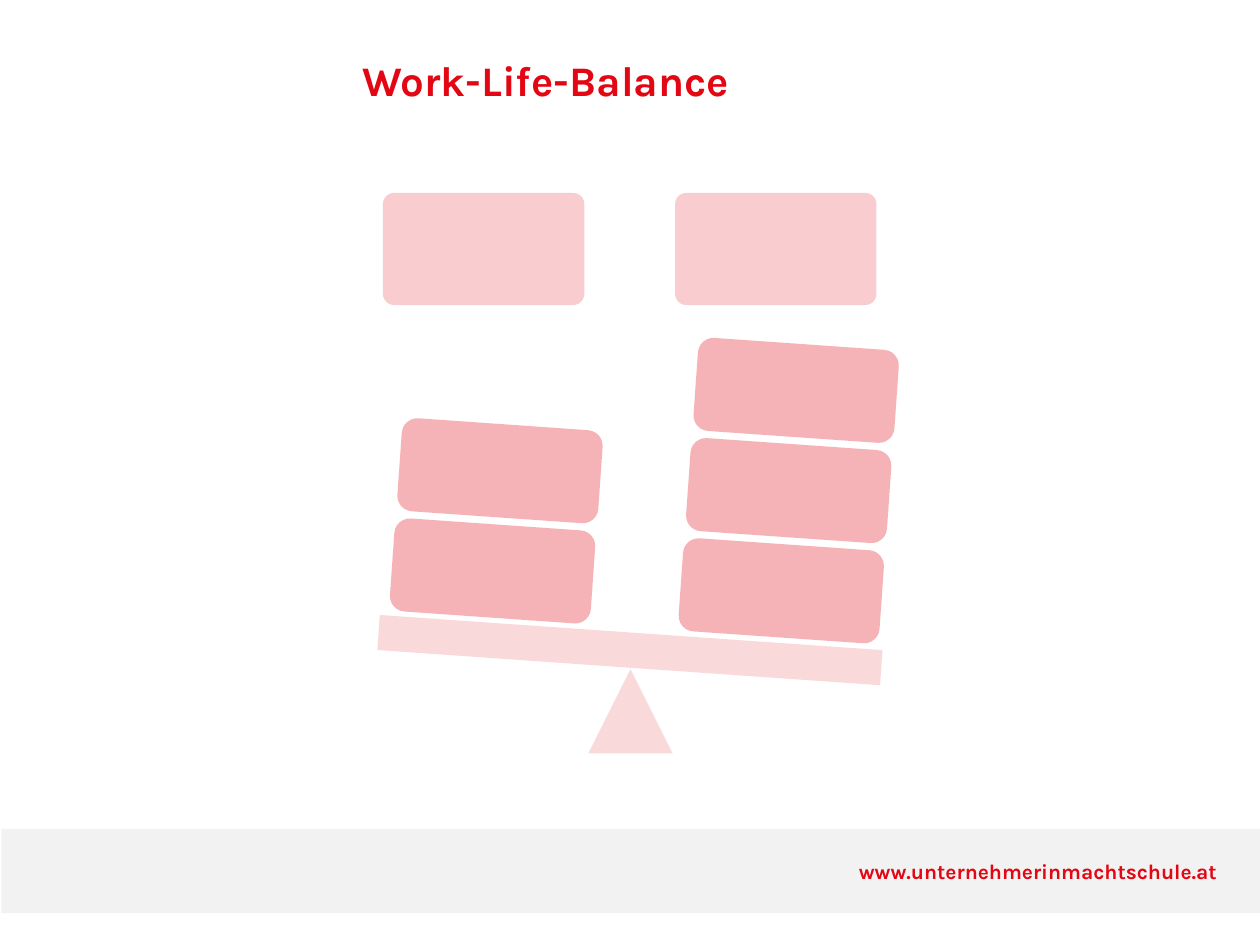
from dataclasses import dataclass
from typing import Optional

import pptx
import pptx.dml.color
import pptx.enum.shapes
import pptx.enum.text
import pptx.oxml
import pptx.oxml.ns
import pptx.util

Cm = pptx.util.Cm
Pt = pptx.util.Pt
RGBColor = pptx.dml.color.RGBColor
MSO_SHAPE = pptx.enum.shapes.MSO_SHAPE

RED = RGBColor(0xE3, 0x06, 0x13)
GRAY = RGBColor(0xF2, 0xF2, 0xF2)
FONT = "Karla"
TILT = 4
BLOCK_SHIFT, BLOCK_RISE = 0.15, 2.02


@dataclass
class Part:
    """A filled shape; lengths in cm, opacity in percent."""
    kind: MSO_SHAPE
    left: float
    top: float
    width: float
    height: float
    opacity: int = 100
    color: RGBColor = RED
    rotation: float = 0
    corner: Optional[float] = None


@dataclass
class Stack:
    """Blocks piled up at right angles to the tilted plank."""
    left: float
    bottom_top: float
    count: int


CARDS = [Part(MSO_SHAPE.ROUNDED_RECTANGLE, x, 3.89, 4.06, 2.26, 20, corner=0.1)
         for x in (7.72, 13.61)]
SEESAW = [
    Part(MSO_SHAPE.ISOSCELES_TRIANGLE, 11.86, 13.49, 1.7, 1.7, 15),
    Part(MSO_SHAPE.RECTANGLE, 7.62, 12.75, 10.16, 0.71, 15, rotation=TILT),
]
STACKS = [Stack(13.72, 10.97, 3), Stack(7.9, 10.57, 2)]
FOOTER = Part(MSO_SHAPE.RECTANGLE, 0.03, 16.71, 25.37, 1.7, color=GRAY)


def add_part(s: pptx.slide.Slide, part: Part) -> pptx.shapes.autoshape.Shape:
    sp = s.shapes.add_shape(part.kind, Cm(part.left), Cm(part.top),
                            Cm(part.width), Cm(part.height))
    sp.shadow.inherit = False
    sp.line.fill.background()
    sp.fill.solid()
    sp.fill.fore_color.rgb = part.color
    sp.rotation = part.rotation
    if part.corner is not None:
        sp.adjustments[0] = part.corner
    if part.opacity < 100:
        clr = sp.fill._xPr.find(".//" + pptx.oxml.ns.qn("a:srgbClr"))
        alpha = pptx.oxml.parse_xml(
            f'<a:alpha {pptx.oxml.ns.nsdecls("a")} val="{part.opacity * 1000}"/>')
        clr.append(alpha)
    return sp


def add_stack(s: pptx.slide.Slide, stack: Stack) -> None:
    for i in range(stack.count):
        add_part(s, Part(MSO_SHAPE.ROUNDED_RECTANGLE,
                         stack.left + i * BLOCK_SHIFT,
                         stack.bottom_top - i * BLOCK_RISE,
                         4.06, 1.88, 30, rotation=TILT))


def set_text(sp: pptx.shapes.autoshape.Shape, text: str, size: float,
             align: pptx.enum.text.PP_ALIGN) -> None:
    tf = sp.text_frame
    tf.word_wrap = True
    p = tf.paragraphs[0]
    p.text = text
    p.alignment = align
    p.font.name = FONT
    p.font.size = Pt(size)
    p.font.bold = True
    p.font.color.rgb = RED


def main() -> None:
    prs = pptx.Presentation()
    prs.slide_width, prs.slide_height = Cm(25.4), Cm(19.05)
    s = prs.slides.add_slide(prs.slide_layouts[6])

    footer = add_part(s, FOOTER)
    footer.text_frame.margin_right = Cm(0.86)
    footer.text_frame.vertical_anchor = pptx.enum.text.MSO_ANCHOR.MIDDLE
    set_text(footer, "www.unternehmerinmachtschule.at", 12,
             pptx.enum.text.PP_ALIGN.RIGHT)

    title = s.shapes.add_textbox(Cm(7.06), Cm(0.97), Cm(16.99), Cm(1.27))
    set_text(title, "Work-Life-Balance", 24, pptx.enum.text.PP_ALIGN.LEFT)

    for part in CARDS + SEESAW:
        add_part(s, part)
    for stack in STACKS:
        add_stack(s, stack)

    prs.save("out.pptx")


if __name__ == "__main__":
    main()
